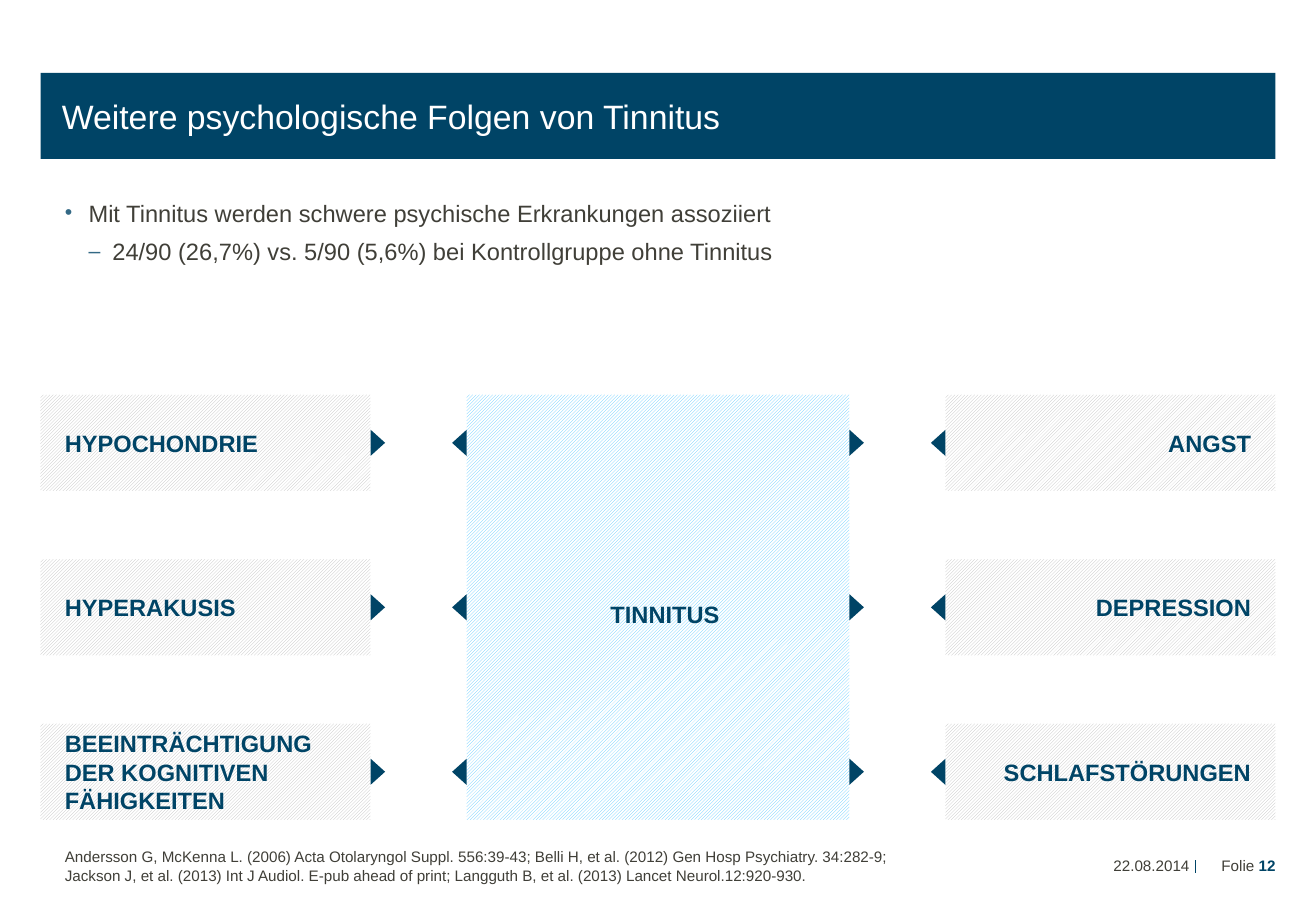
import lxml.etree
import pptx
import pptx.dml.color
import pptx.enum.dml
import pptx.enum.shapes
import pptx.enum.text
import pptx.oxml.ns
import pptx.util

RGBColor = pptx.dml.color.RGBColor
NAVY = RGBColor(0x00, 0x44, 0x66)
BULLET_BLUE = RGBColor(0x33, 0x69, 0x85)
SKY = RGBColor(0x5C, 0xC9, 0xFF)
GRAY = RGBColor(0xBF, 0xBF, 0xBF)
TEXT = RGBColor(0x40, 0x3F, 0x38)
WHITE = RGBColor(0xFF, 0xFF, 0xFF)

ALIGN = pptx.enum.text.PP_ALIGN
ANCHOR = pptx.enum.text.MSO_ANCHOR
SHAPE = pptx.enum.shapes.MSO_SHAPE
qn = pptx.oxml.ns.qn

COLUMNS, ROWS = 130, 90
CELL_POINTS = 6
LEFT, WIDTH = 4, 122
TEXT_LEFT = 6.4
BOX_WIDTH, BOX_HEIGHT = 32.6, 9.5
BOX_TOP, BOX_PITCH = 39, 16.25
CENTER_LEFT, CENTER_WIDTH = 46.1, 37.8
RIGHT_LEFT = LEFT + WIDTH - BOX_WIDTH
INSET, WIDE_INSET = 1, 2.4
ARROW_BASE, ARROW_HEIGHT = 2.6, 1.44
FOOTER_TOP, FOOTER_HEIGHT = 84.1, 2.9

LEFT_EFFECTS = ["HYPOCHONDRIE", "HYPERAKUSIS", "BEEINTRÄCHTIGUNG DER KOGNITIVEN FÄHIGKEITEN"]
RIGHT_EFFECTS = ["ANGST", "DEPRESSION", "SCHLAFSTÖRUNGEN"]
POINTS = [
    (0, "•", "Mit Tinnitus werden schwere psychische Erkrankungen assoziiert"),
    (1, "–", "24/90 (26,7%) vs. 5/90 (5,6%) bei Kontrollgruppe ohne Tinnitus"),
]
REFERENCES = (
    "Andersson G, McKenna L. (2006) Acta Otolaryngol Suppl. 556:39-43; "
    "Belli H, et al. (2012) Gen Hosp Psychiatry. 34:282-9; "
    "Jackson J, et al. (2013) Int J Audiol. E-pub ahead of print; "
    "Langguth B, et al. (2013) Lancet Neurol.12:920-930."
)


def cells(*counts):
    """Convert counts of grid cells to lengths."""
    return [pptx.util.Pt(count * CELL_POINTS) for count in counts]


class SlideBuilder:
    """Hold the style and the current slide, and add elements on its grid."""

    font = "Arial"

    def __init__(self, presentation):
        self.slide = presentation.slides.add_slide(presentation.slide_layouts[1])

    def place(self, shape, left, top, width, height):
        shape.left, shape.top, shape.width, shape.height = cells(left, top, width, height)

    def frame(self, shape, insets=(0, 0, 0, 0), anchor=ANCHOR.MIDDLE):
        frame = shape.text_frame
        frame.word_wrap = True
        frame.auto_size = pptx.enum.text.MSO_AUTO_SIZE.NONE
        frame.vertical_anchor = anchor
        (frame.margin_left, frame.margin_top,
         frame.margin_right, frame.margin_bottom) = cells(*insets)
        return frame

    def add_text(self, paragraph, text, size, color, bold=False, align=ALIGN.LEFT, space=0):
        paragraph.alignment = align
        paragraph.space_before = paragraph.space_after = pptx.util.Pt(space)
        run = paragraph.add_run()
        run.text = text
        run.font.name = self.font
        run.font.size = pptx.util.Pt(size)
        run.font.bold = bold
        run.font.color.rgb = color

    def title(self, text):
        shape = self.slide.shapes.title
        self.place(shape, LEFT, 7.2, WIDTH, 8.5)
        shape.fill.solid()
        shape.fill.fore_color.rgb = NAVY
        frame = self.frame(shape, (2.1, 0, 0, 0))
        self.add_text(frame.paragraphs[0], text, 20, WHITE)

    def bullets(self, points):
        shape = self.slide.placeholders[1]
        self.place(shape, TEXT_LEFT, 18.6, LEFT + WIDTH - TEXT_LEFT, 62.4)
        frame = self.frame(shape, (0, INSET, 0, 0), ANCHOR.TOP)
        for index, (level, mark, text) in enumerate(points):
            paragraph = frame.add_paragraph() if index else frame.paragraphs[0]
            paragraph.level = level
            self.add_text(paragraph, text, 14, TEXT, space=3)
            self.bullet(paragraph, level, mark)

    def bullet(self, paragraph, level, mark):
        margin, indent = cells((level + 1) * 2.35, -2.35)
        properties = paragraph._p.get_or_add_pPr()
        properties.set("marL", str(margin))
        properties.set("indent", str(indent))
        color = lxml.etree.SubElement(properties, qn("a:buClr"))
        lxml.etree.SubElement(color, qn("a:srgbClr"), val=str(BULLET_BLUE))
        lxml.etree.SubElement(properties, qn("a:buSzPct"), val="90000")
        lxml.etree.SubElement(properties, qn("a:buChar"), char=mark)

    def shape(self, kind, left, top, width, height):
        shape = self.slide.shapes.add_shape(kind, *cells(left, top, width, height))
        shape.shadow.inherit = False
        shape.line.fill.background()
        return shape

    def box(self, text, left, top, width, height, hatch, align, line_spacing=1.0):
        shape = self.shape(SHAPE.RECTANGLE, left, top, width, height)
        shape.fill.patterned()
        shape.fill.pattern = pptx.enum.dml.MSO_PATTERN.DARK_UPWARD_DIAGONAL
        shape.fill.fore_color.rgb = hatch
        shape.fill.back_color.rgb = WHITE
        insets = (WIDE_INSET, INSET, INSET, INSET)
        if align == ALIGN.RIGHT:
            insets = (INSET, INSET, WIDE_INSET, INSET)
        paragraph = self.frame(shape, insets).paragraphs[0]
        paragraph.line_spacing = line_spacing
        self.add_text(paragraph, text, 14, NAVY, True, align, 3)

    def arrow(self, edge, middle, direction):
        center = edge + direction * ARROW_HEIGHT / 2
        shape = self.shape(SHAPE.ISOSCELES_TRIANGLE, center - ARROW_BASE / 2,
                           middle - ARROW_HEIGHT / 2, ARROW_BASE, ARROW_HEIGHT)
        shape.rotation = direction * 90 % 360
        shape.fill.solid()
        shape.fill.fore_color.rgb = NAVY

    def footer(self, left, width, runs, align=ALIGN.LEFT):
        shape = self.slide.shapes.add_textbox(*cells(left, FOOTER_TOP, width, FOOTER_HEIGHT))
        paragraph = self.frame(shape).paragraphs[0]
        for text, color, bold in runs:
            self.add_text(paragraph, text, 9, color, bold, align)

    def divider(self, column, top, bottom):
        line = self.slide.shapes.add_connector(
            pptx.enum.shapes.MSO_CONNECTOR.STRAIGHT, *cells(column, top, column, bottom))
        line.line.color.rgb = NAVY
        line.line.width = pptx.util.Pt(1)
        lxml.etree.SubElement(line._element.spPr, qn("a:effectLst"))


def main():
    """Build the slide and save it."""
    presentation = pptx.Presentation()
    presentation.slide_width, presentation.slide_height = cells(COLUMNS, ROWS)
    builder = SlideBuilder(presentation)
    builder.title("Weitere psychologische Folgen von Tinnitus")
    builder.bullets(POINTS)

    builder.box("TINNITUS", CENTER_LEFT, BOX_TOP, CENTER_WIDTH,
                2 * BOX_PITCH + BOX_HEIGHT, SKY, ALIGN.CENTER, 1.5)
    for row, (left_effect, right_effect) in enumerate(zip(LEFT_EFFECTS, RIGHT_EFFECTS)):
        top = BOX_TOP + row * BOX_PITCH
        builder.box(left_effect, LEFT, top, BOX_WIDTH, BOX_HEIGHT, GRAY, ALIGN.LEFT)
        builder.box(right_effect, RIGHT_LEFT, top, BOX_WIDTH, BOX_HEIGHT, GRAY, ALIGN.RIGHT)
        for edge, direction in [(LEFT + BOX_WIDTH, 1), (CENTER_LEFT, -1),
                                (CENTER_LEFT + CENTER_WIDTH, 1), (RIGHT_LEFT, -1)]:
            builder.arrow(edge, top + BOX_HEIGHT / 2, direction)

    builder.footer(TEXT_LEFT, 82.7, [(REFERENCES, TEXT, False)])
    builder.footer(106.8, 10.7, [("22.08.2014", TEXT, False)], ALIGN.RIGHT)
    builder.footer(118.4, 7.6, [("Folie ", TEXT, False), ("12", NAVY, True)], ALIGN.RIGHT)
    builder.divider(118.1, 85, 86.2)
    presentation.save("out.pptx")


if __name__ == "__main__":
    main()
